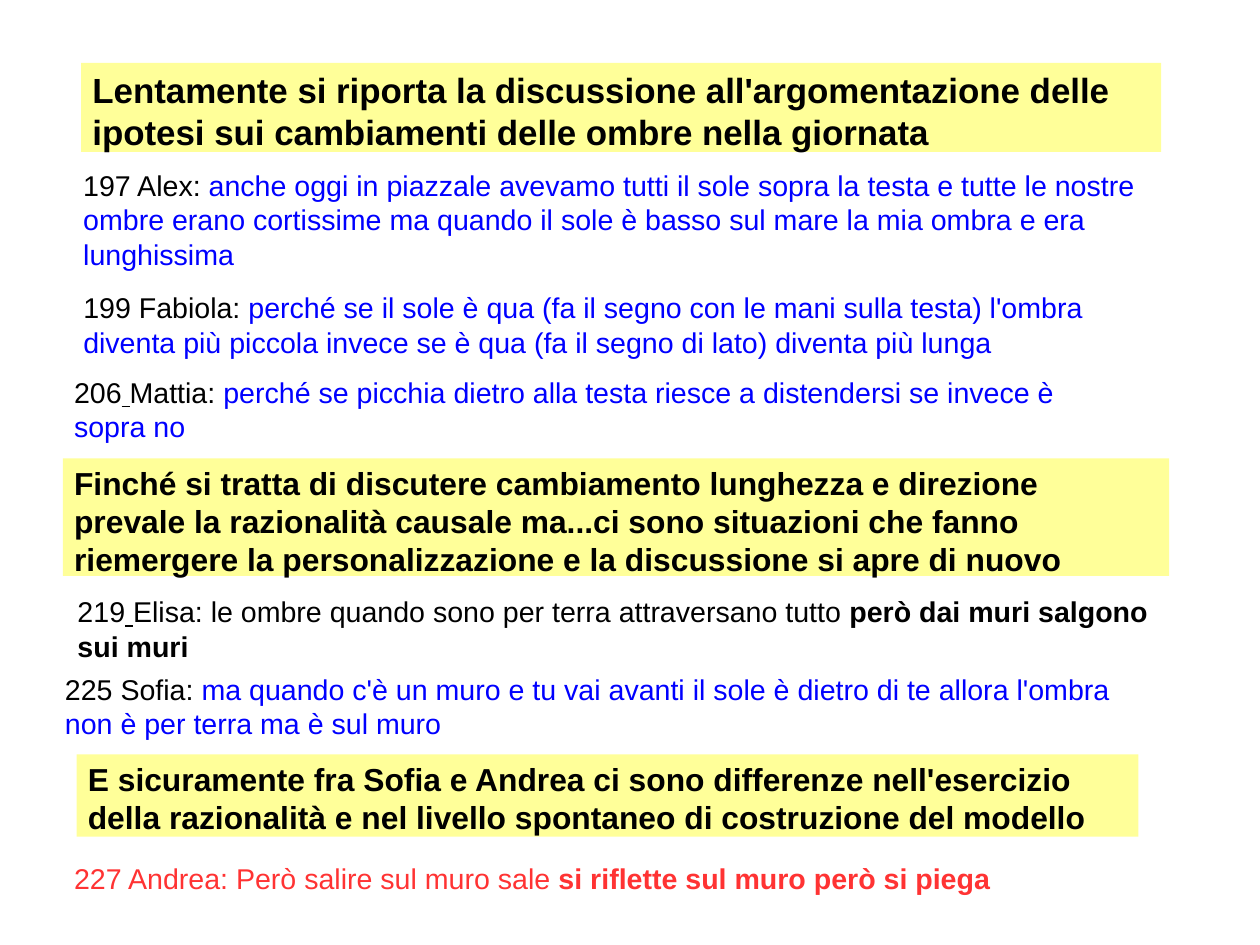
from dataclasses import dataclass

from pptx import Presentation
from pptx.dml.color import RGBColor
from pptx.enum.shapes import MSO_SHAPE
from pptx.enum.text import MSO_ANCHOR, PP_ALIGN
from pptx.util import Inches, Pt

# Slide of 28 by 21 cm
CM_PER_INCH = 2.54
SLIDE_WIDTH = Inches(28 / CM_PER_INCH)
SLIDE_HEIGHT = Inches(21 / CM_PER_INCH)


@dataclass(frozen=True)
class Theme:
    font: str = "Arial"
    black: RGBColor = RGBColor(0x00, 0x00, 0x00)
    blue: RGBColor = RGBColor(0x00, 0x00, 0xFF)
    red: RGBColor = RGBColor(0xFF, 0x33, 0x33)
    yellow: RGBColor = RGBColor(0xFF, 0xFF, 0x99)
    quote_size: int = 18
    comment_size: int = 20
    heading_size: int = 22


THEME = Theme()

# Teacher's comments: left, top, width, height, size, wording
COMMENTS = [
    (0.71, 0.55, 9.45, 0.78, THEME.heading_size,
     "Lentamente si riporta la discussione all'argomentazione delle ipotesi "
     "sui cambiamenti delle ombre nella giornata"),
    (0.55, 4.01, 9.68, 1.03, THEME.comment_size,
     "Finché si tratta di discutere cambiamento lunghezza e direzione prevale "
     "la razionalità causale ma...ci sono situazioni che fanno riemergere la "
     "personalizzazione e la discussione si apre di nuovo"),
    (0.67, 6.6, 9.29, 0.72, THEME.comment_size,
     "E sicuramente fra Sofia e Andrea ci sono differenze nell'esercizio "
     "della razionalità e nel livello spontaneo di costruzione del modello"),
]

# Pupils' quotes: left, top, width, height, runs of (wording, colour, style)
QUOTES = [
    (0.63, 1.42, 9.6, 0.94, [
        ("197 Alex: ", THEME.black, ""),
        ("anche oggi in piazzale avevamo tutti il sole sopra la testa e tutte "
         "le nostre ombre erano cortissime ma quando il sole è basso sul mare "
         "la mia ombra e era lunghissima", THEME.blue, "")]),
    (0.63, 2.49, 9.21, 0.66, [
        ("199 Fabiola: ", THEME.black, ""),
        ("perché se il sole è qua (fa il segno con le mani sulla testa) "
         "l'ombra diventa più piccola invece se è qua (fa il segno di lato) "
         "diventa più lunga", THEME.blue, "")]),
    (0.55, 3.23, 9.37, 0.66, [
        ("206", THEME.black, ""),
        (" ", THEME.black, "underline"),
        ("Mattia: ", THEME.black, ""),
        ("perché se picchia dietro alla testa riesce a distendersi se invece "
         "è sopra no", THEME.blue, "")]),
    (0.58, 5.15, 9.6, 0.67, [
        ("219", THEME.black, ""),
        (" ", THEME.black, "underline"),
        ("Elisa: le ombre quando sono per terra attraversano tutto ",
         THEME.black, ""),
        ("però dai muri salgono sui muri", THEME.black, "bold")]),
    (0.47, 5.83, 9.53, 0.66, [
        ("225 Sofia:", THEME.black, ""),
        (" ma quando c'è un muro e tu vai avanti il sole è dietro di te "
         "allora l'ombra non è per terra ma è sul muro", THEME.blue, "")]),
    (0.55, 7.48, 9.37, 0.39, [
        ("227 Andrea: Però salire sul muro sale", THEME.red, ""),
        (" si riflette sul muro però si piega", THEME.red, "bold")]),
]


def write_passage(frame, passages, size):
    frame.word_wrap = True
    frame.vertical_anchor = MSO_ANCHOR.TOP
    paragraph = frame.paragraphs[0]
    paragraph.alignment = PP_ALIGN.LEFT
    for wording, colour, style in passages:
        run = paragraph.add_run()
        run.text = wording
        run.font.name = THEME.font
        run.font.size = Pt(size)
        run.font.color.rgb = colour
        run.font.bold = style == "bold"
        run.font.underline = style == "underline"


def add_quote(slide, left, top, width, height, passages):
    quote = slide.shapes.add_textbox(
        Inches(left), Inches(top), Inches(width), Inches(height))
    write_passage(quote.text_frame, passages, THEME.quote_size)


def add_comment(slide, left, top, width, height, size, wording):
    comment = slide.shapes.add_shape(
        MSO_SHAPE.RECTANGLE,
        Inches(left), Inches(top), Inches(width), Inches(height))
    comment.shadow.inherit = False
    comment.fill.solid()
    comment.fill.fore_color.rgb = THEME.yellow
    comment.line.fill.background()
    write_passage(comment.text_frame, [(wording, THEME.black, "bold")], size)


def main():
    deck = Presentation()
    deck.slide_width = SLIDE_WIDTH
    deck.slide_height = SLIDE_HEIGHT
    slide = deck.slides.add_slide(deck.slide_layouts[6])

    # Discussion among the pupils
    for quote in QUOTES:
        add_quote(slide, *quote)

    # Highlighted comments
    for comment in COMMENTS:
        add_comment(slide, *comment)

    deck.save("out.pptx")


if __name__ == "__main__":
    main()
